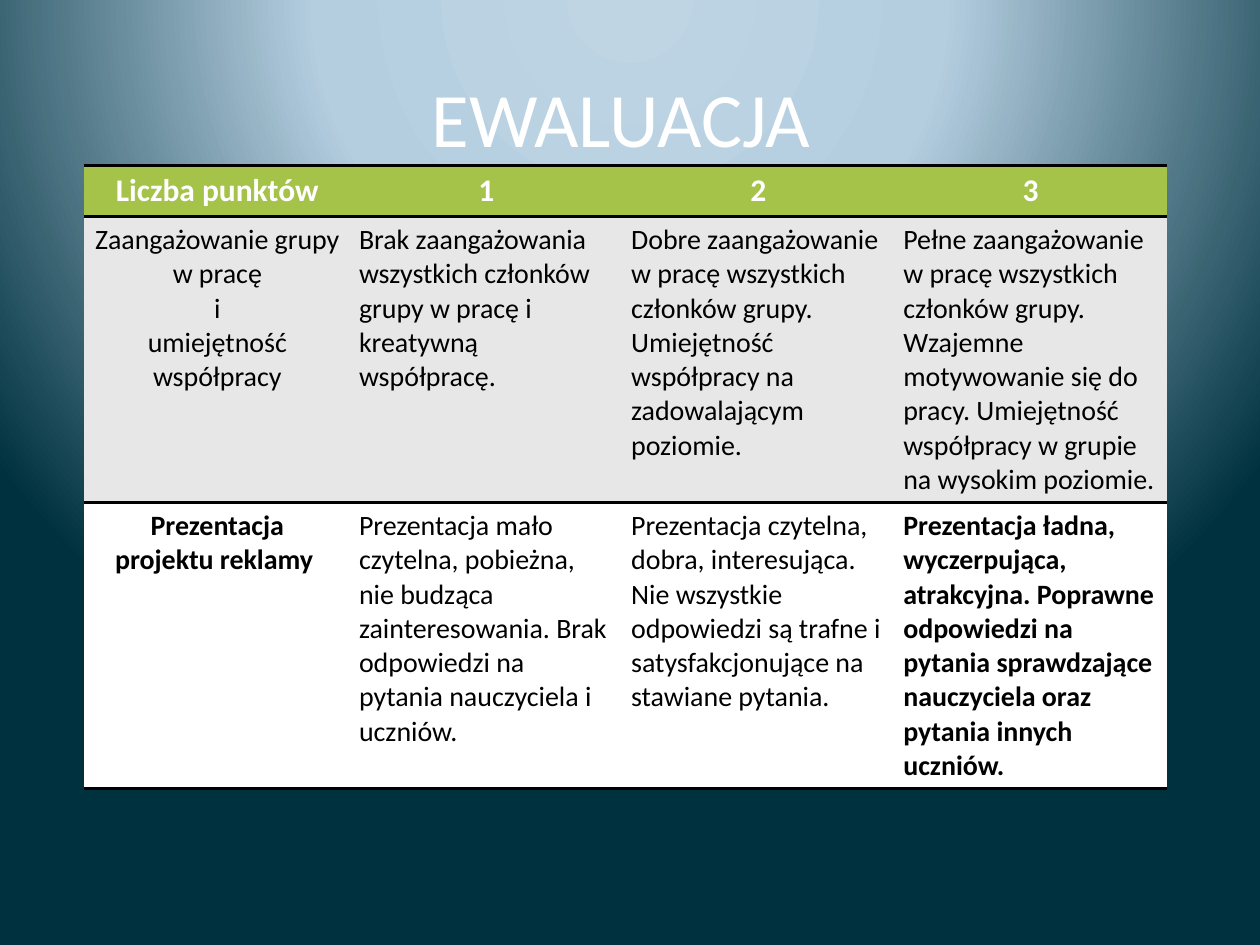
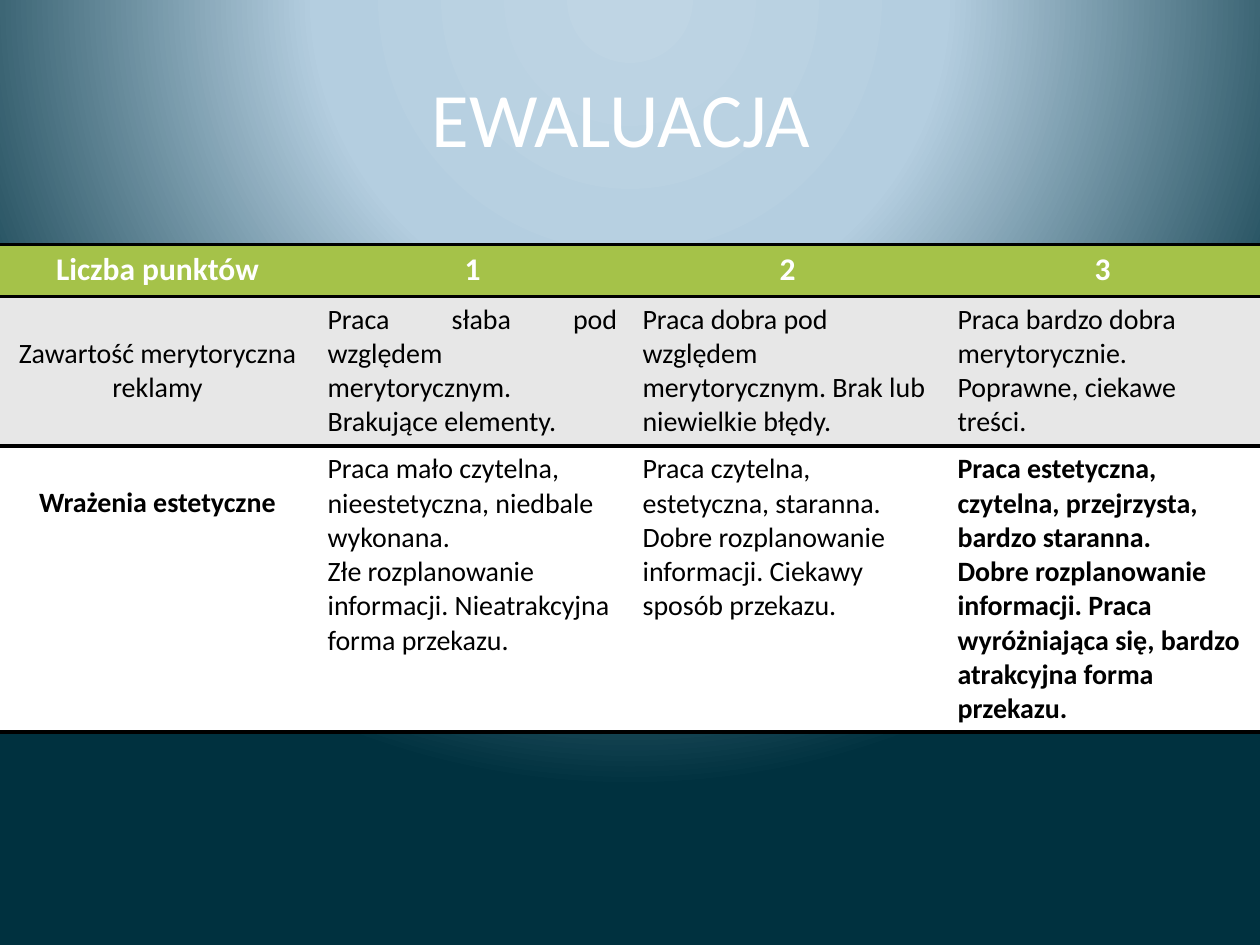
import pptx
import pptx.util
import pptx.oxml
import pptx.oxml.ns
import pptx.dml.color
import pptx.enum.text

WIDE, HIGH = 10, 7.5
FONT = "Calibri"
WHITE, BLACK, GREEN, GREY = "FFFFFF", "000000", "A5C249", "E7E7E7"
STOPS = [(0, "BFD5E4"), (40, "B4CEE0"), (100, "00313F")]
PLAIN = "{2D5ABB26-0587-4C30-8999-92F81FD0307C}"
HEAD = ["Liczba punktów", "1", "2", "3"]
LINE = 0.27
ALIGN = pptx.enum.text.PP_ALIGN
inch = pptx.util.Inches

TEAM = [
    "Zaangażowanie grupy w pracę\vi\vumiejętność współpracy",
    "Brak zaangażowania wszystkich członków grupy w pracę i kreatywną współpracę.",
    "Dobre zaangażowanie w pracę wszystkich członków grupy. "
    "Umiejętność współpracy na zadowalającym poziomie.",
    "Pełne zaangażowanie w pracę wszystkich członków grupy. "
    "Wzajemne motywowanie się do pracy. "
    "Umiejętność współpracy w grupie na wysokim poziomie.",
]
SHOW = [
    "Prezentacja\nprojektu reklamy ",
    "Prezentacja mało czytelna, pobieżna, nie budząca zainteresowania. "
    "Brak odpowiedzi na pytania nauczyciela i uczniów.",
    "Prezentacja czytelna, dobra, interesująca. Nie wszystkie odpowiedzi są "
    "trafne i satysfakcjonujące na stawiane pytania.",
    "Prezentacja ładna, wyczerpująca, atrakcyjna. Poprawne odpowiedzi na "
    "pytania sprawdzające nauczyciela oraz pytania innych uczniów.",
]
MERIT = [
    "Zawartość merytoryczna\nreklamy",
    "Praca słaba pod względem merytorycznym. Brakujące elementy.",
    "Praca dobra pod względem merytorycznym. Brak lub niewielkie błędy.",
    "Praca bardzo dobra merytorycznie. Poprawne, ciekawe treści.",
]
STYLE = [
    "Wrażenia estetyczne",
    "Praca mało czytelna, nieestetyczna, niedbale wykonana.\n"
    "Złe rozplanowanie informacji. Nieatrakcyjna forma przekazu.",
    "Praca czytelna, estetyczna, staranna.\n"
    "Dobre rozplanowanie informacji. Ciekawy sposób przekazu.",
    "Praca estetyczna, czytelna, przejrzysta, bardzo staranna.\n"
    "Dobre rozplanowanie informacji. Praca wyróżniająca się, "
    "bardzo atrakcyjna forma przekazu.",
]


def color(code):
    return pptx.dml.color.RGBColor.from_string(code)


def xml(text):
    space = pptx.oxml.ns.nsdecls("a")
    return pptx.oxml.parse_xml(text.replace(" ", f" {space} ", 1))


def glow(master):
    master.background.fill.solid()
    solid = master.element.xpath(".//p:bgPr/a:solidFill")[0]
    stops = "".join(
        f'<a:gs pos="{at * 1000}"><a:srgbClr val="{code}"/></a:gs>' for at, code in STOPS
    )
    solid.getparent().replace(solid, xml(
        f'<a:gradFill rotWithShape="1"><a:gsLst>{stops}</a:gsLst><a:path path="circle">'
        '<a:fillToRect l="50000" t="-80000" r="50000" b="180000"/></a:path></a:gradFill>'
    ))


def write(frame, text, size, code, bold=False, align=ALIGN.LEFT):
    frame.text = text
    frame.word_wrap = True
    for para in frame.paragraphs:
        para.alignment = align
        para.font.name = FONT
        para.font.size = pptx.util.Pt(size)
        para.font.bold = bold
        para.font.color.rgb = color(code)


def title(slide):
    box = slide.shapes.add_textbox(
        inch(0.05 * WIDE), inch(0.04 * HIGH), inch(0.9 * WIDE), inch(HIGH / 6))
    box.text_frame.vertical_anchor = pptx.enum.text.MSO_ANCHOR.MIDDLE
    write(box.text_frame, "EWALUACJA ", 44, WHITE, align=ALIGN.CENTER)


def rule(cell, sides):
    for spot, side in enumerate(sides):
        cell._tc.get_or_add_tcPr().insert(spot, xml(
            f'<a:ln{side} w="25400"><a:solidFill><a:srgbClr val="{BLACK}"/>'
            f'</a:solidFill></a:ln{side}>'))


def grid(slide, left, top, cols, rows, lines, side, drop=0, just=()):
    tall = [0.41] + [count * LINE + 0.11 for count in lines]
    shape = slide.shapes.add_table(
        len(tall), len(cols), inch(left), inch(top), inch(sum(cols)), inch(sum(tall)))
    table = shape.table
    table._tbl.tblPr.find(pptx.oxml.ns.qn("a:tableStyleId")).text = PLAIN
    table.first_row = table.horz_banding = False
    for col, wide in zip(table.columns, cols):
        col.width = inch(wide)
    for row, high in zip(table.rows, tall):
        row.height = inch(high)
    fills = [GREEN, GREY, WHITE]
    edges = ["TB", "T", "B"]
    for i, texts in enumerate([HEAD] + rows):
        for j, text in enumerate(texts):
            cell = table.cell(i, j)
            cell.margin_left = cell.margin_right = inch(side)
            cell.margin_top = inch(0.05 + (drop if i and not j else 0))
            cell.fill.solid()
            cell.fill.fore_color.rgb = color(fills[i])
            rule(cell, edges[i])
            align = ALIGN.CENTER if i == 0 or j == 0 else ALIGN.LEFT
            if (i, j) in just:
                align = ALIGN.JUSTIFY
            bold = i == 0 or (i == 2 and j in (0, 3))
            write(cell.text_frame, text, 16 if i else 18, BLACK if i else WHITE, bold, align)


def main():
    deck = pptx.Presentation()
    deck.slide_width, deck.slide_height = inch(WIDE), inch(HIGH)
    glow(deck.slide_master)
    team, merit = [deck.slides.add_slide(deck.slide_layouts[6]) for _ in range(2)]
    for slide in (team, merit):
        title(slide)
    grid(team, 0.67, 1.31, [2.11] + [2.16] * 3, [TEAM, SHOW], [8, 8], 0.07)
    grid(merit, 0, 1.94, [WIDE / 4] * 4, [MERIT, STYLE], [4, 8], 0.1, LINE, [(1, 1)])
    deck.save("out.pptx")


if __name__ == "__main__":
    main()
